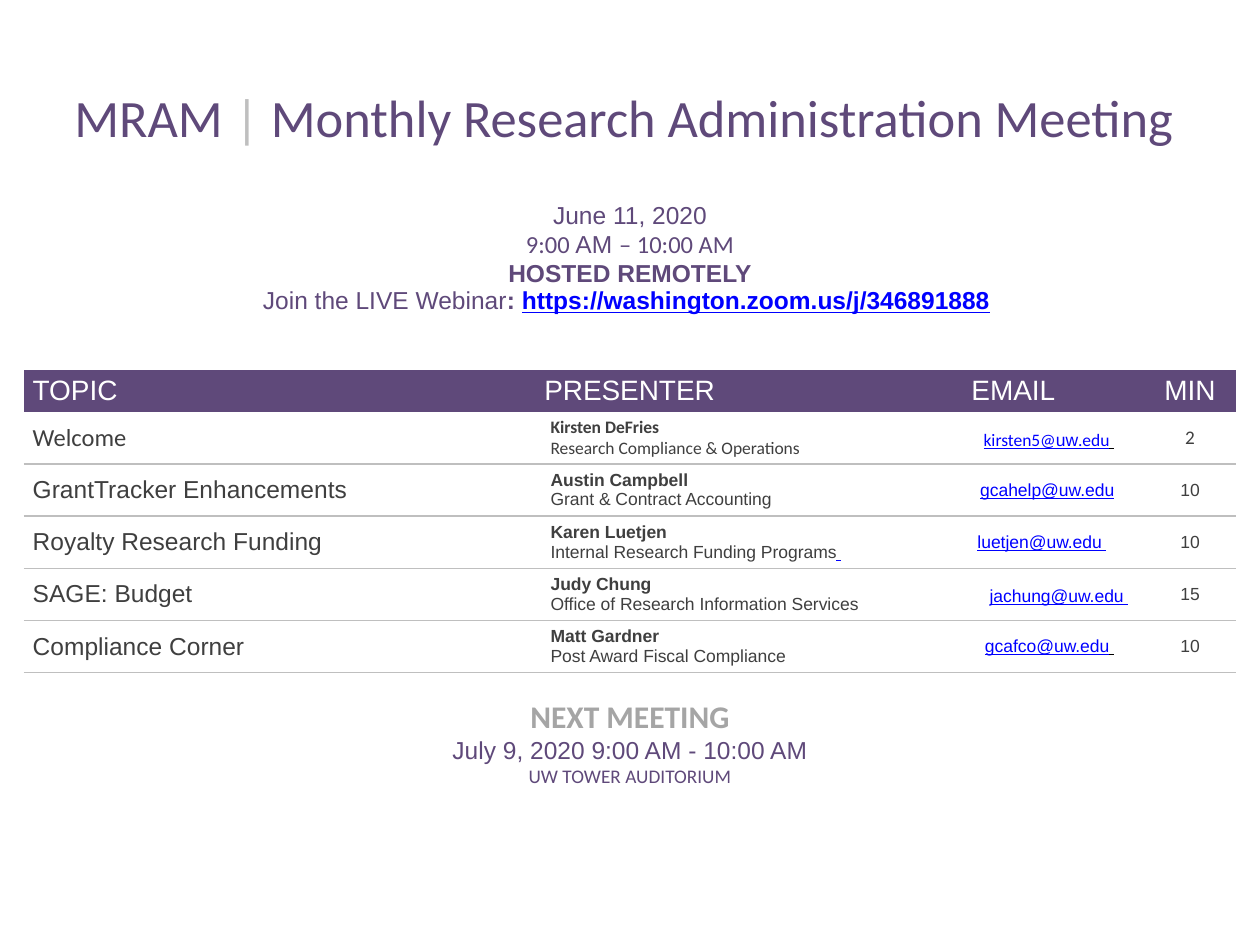
import pptx
import pptx.util
import pptx.dml.color
import pptx.enum.text
from lxml import etree
from pptx.oxml.ns import qn

Inches, Pt = pptx.util.Inches, pptx.util.Pt
ANCHOR = pptx.enum.text.MSO_ANCHOR
ALIGN = pptx.enum.text.PP_ALIGN

HUES = {"plum": "5F497A", "rule": "BFBFBF", "gray": "A5A5A5", "ink": "3F3F3F",
        "link": "0000FF", "white": "FFFFFF", "black": "000000"}
COLS = [4.06, 3.33, 1.5, 0.73]
ROWS = [0.62, 1.74, 0.33] + [0.414] * 5 + [0.92]
PLAIN = "{2D5ABB26-0587-4C30-8999-92F81FD0307C}"  # table style without grid
LINK = {"hue": "link", "line": True}
SERIF = {"font": "Calibri"}

# topic, presenter, office runs, e-mail runs, left and top inset of e-mail, minutes
TOPICS = [
    ("Welcome", "Kirsten DeFries", ["Research Compliance & Operations"],
     [("kirsten5@", LINK), ("uw", {**LINK, "font": "Arial"}), (".edu", LINK),
      (" ", {"hue": "black", "line": True, "font": "Arial"})], 0.11, 0.04, "2"),
    ("GrantTracker Enhancements", "Austin Campbell", ["Grant & Contract Accounting"],
     [("gcahelp@uw.edu", LINK), " "], 0.12, 0, "10"),
    ("Royalty Research Funding", "Karen Luetjen",
     ["Internal Research Funding Programs", (" ", LINK)],
     [("luetjen@uw.edu ", LINK)], 0, 0, "10"),
    ("SAGE: Budget", "Judy Chung", ["Office of Research Information Services"],
     [("jachung@uw.edu ", LINK)], 0.27, 0.04, "15"),
    ("Compliance Corner", "Matt Gardner", ["Post Award Fiscal Compliance"],
     [("gcafco@uw.edu", LINK), (" ", {"hue": "black", "line": True})], 0.12, 0, "10"),
]


def tint(hue):
    return pptx.dml.color.RGBColor.from_string(HUES[hue])


def style(run, size=14, font="Arial", hue="plum", bold=False, line=False):
    face = run.font
    face.size, face.name = Pt(size), font
    face.bold, face.underline = bold, line
    face.color.rgb = tint(hue)


def write(cell, lines, mid=False, **fmt):
    """Fill a cell with lines of runs; a run is a string or (string, format)."""
    frame = cell.text_frame
    for i, runs in enumerate(lines):
        para = frame.add_paragraph() if i else frame.paragraphs[0]
        para.alignment = ALIGN.CENTER if mid else ALIGN.LEFT
        for part in runs:
            text, own = (part, {}) if isinstance(part, str) else part
            run = para.add_run()
            run.text = text
            style(run, **{**fmt, **own})


def setup(cell, fill="white", left=0.07, right=0.07, top=0, base=0,
          anchor=ANCHOR.MIDDLE):
    cell.margin_left, cell.margin_right = Inches(left), Inches(right)
    cell.margin_top, cell.margin_bottom = Inches(top), Inches(base)
    cell.vertical_anchor = anchor
    cell.fill.solid()
    cell.fill.fore_color.rgb = tint(fill)


def rule(cell):
    """Draw a thin line under a cell."""
    props = cell._tc.get_or_add_tcPr()
    edge = etree.Element(qn("a:lnB"), w=str(Pt(1)))
    fill = etree.SubElement(edge, qn("a:solidFill"))
    etree.SubElement(fill, qn("a:srgbClr"), val=HUES["rule"])
    props.insert(0, edge)


def grid(slide):
    frame = slide.shapes.add_table(len(ROWS), len(COLS), Inches(0.19), Inches(0.58),
                                   Inches(sum(COLS)), Inches(sum(ROWS)))
    table = frame.table
    table.first_row = table.horz_banding = False
    frame._element.find(".//" + qn("a:tableStyleId")).text = PLAIN
    for col, wide in zip(table.columns, COLS):
        col.width = Inches(wide)
    for row, high in zip(table.rows, ROWS):
        row.height = Inches(high)
    return table


def banner(table, row, lines, base=0, **fmt):
    """Write centred lines across a whole row."""
    cell = table.cell(row, 0)
    cell.merge(table.cell(row, len(COLS) - 1))
    setup(cell, anchor=ANCHOR.BOTTOM, base=base)
    write(cell, lines, mid=True, **fmt)


def header(table):
    for col, name in enumerate(["TOPIC", "PRESENTER", "EMAIL", "MIN"]):
        cell = table.cell(2, col)
        setup(cell, "plum", left=0.13 if name == "EMAIL" else 0.07)
        write(cell, [[name]], mid=name == "MIN", size=16, hue="white")


def agenda(table):
    for row, item in enumerate(TOPICS, 3):
        topic, name, office, mail, left, top, mins = item
        first = row == 3
        fmt = {"hue": "ink", "font": "Calibri" if first else "Arial"}
        cells = [table.cell(row, col) for col in range(len(COLS))]
        setup(cells[0])
        setup(cells[1], left=0.12, right=0.12)
        setup(cells[2], left=left, right=0.12, top=top)
        setup(cells[3])
        write(cells[0], [[topic]], **fmt)
        write(cells[1], [[(name, {"bold": True})], office], size=10, **fmt)
        write(cells[2], [mail], mid=True, size=10, **fmt)
        write(cells[3], [[mins]], mid=True, size=11 if first else 10, **fmt)
        for cell in cells:
            rule(cell)


def main():
    deck = pptx.Presentation()
    deck.slide_width, deck.slide_height = Inches(10), Inches(7.5)
    slide = deck.slides.add_slide(deck.slide_layouts[6])
    table = grid(slide)
    banner(table, 0, [["MRAM ", ("|", {"hue": "rule"}),
                       " Monthly Research Administration Meeting "]],
           size=30, font="Calibri")
    bold = {"bold": True}
    banner(table, 1, [
        ["June 11, 2020"],
        [("9:00 ", SERIF), "AM ", ("– 10:00 AM", SERIF)],
        [("HOSTED REMOTELY", bold)],
        ["Join the LIVE Webinar", (": ", bold),
         ("https://washington.zoom.us/j/346891888", {**LINK, **bold}), (" ", bold)],
    ], base=0.44)
    header(table)
    agenda(table)
    banner(table, len(ROWS) - 1, [
        [("NEXT MEETING", {"size": 18, "hue": "gray", **SERIF, **bold})],
        ["July 9, 2020 9:00 AM - 10:00 AM"],
        [("UW TOWER AUDITORIUM", {"size": 11, **SERIF})],
    ])
    deck.save("out.pptx")


if __name__ == "__main__":
    main()
